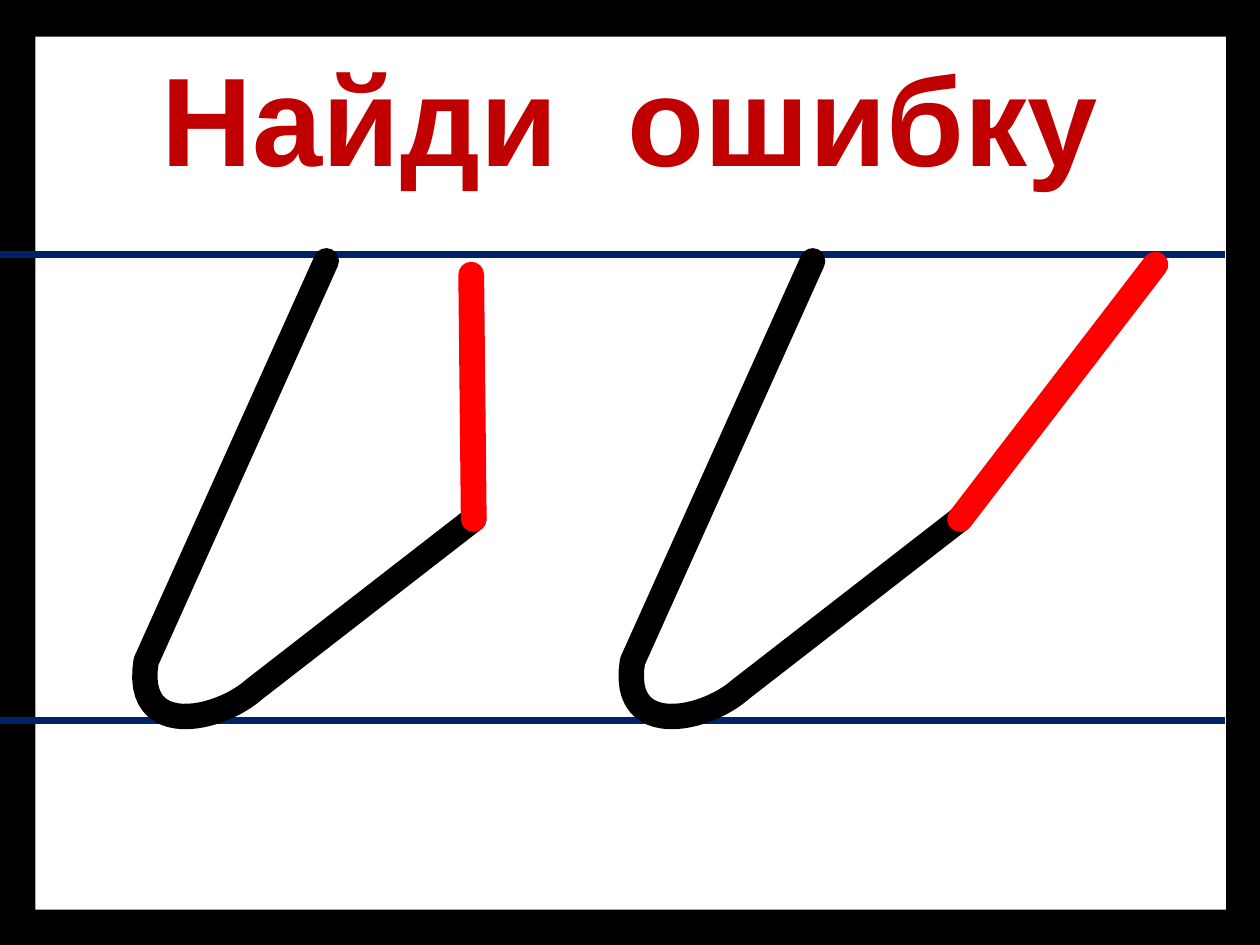
from lxml import etree
from pptx import Presentation
from pptx.dml.color import RGBColor
from pptx.enum.shapes import MSO_CONNECTOR, MSO_SHAPE
from pptx.enum.text import MSO_ANCHOR, PP_ALIGN
from pptx.oxml.ns import qn
from pptx.util import Inches, Pt

STRAIGHT = MSO_CONNECTOR.STRAIGHT
RECTANGLE = MSO_SHAPE.RECTANGLE

COLORS = {"frame": "000000", "paper": "FFFFFF", "ruling": "002368",
          "title": "C00000", "stroke": "000000", "mistake": "FF0000"}

# Content: lengths in inches
TITLE = "Найди  ошибку"
PAPER = (0.28, 0.29, 9.45, 6.93)
RULING_HEIGHTS = (2.02, 5.72)
RULING_END = 9.72
HOOK_TOP = (2.59, 2.07)
HOOK_BEND = ((1.16, 5.25), (1.06, 5.87), (1.74, 5.72), (2.02, 5.47))
HOOK_END = (3.76, 4.12)
LETTERS = [  # shift to the right, tip of the mistaken stroke
    (0, (3.74, 2.18)),
    (3.86, (9.17, 2.1)),
]
BEND_STEPS = 24


def color(name):
    return RGBColor.from_string(COLORS[name])


def style_line(shape, name, width, rounded=False):
    shape.line.color.rgb = color(name)
    shape.line.width = Pt(width)
    if rounded:
        outline = shape.line._get_or_add_ln()
        outline.set("cap", "rnd")
        etree.SubElement(outline, qn("a:round"))


def add_line(start, end, name, width, rounded=False):
    line = slide.shapes.add_connector(
        STRAIGHT, *(Inches(value) for value in (*start, *end)))
    style_line(line, name, width, rounded)
    etree.SubElement(line.element.spPr, qn("a:effectLst"))


def bend_point(t):
    weights = ((1 - t) ** 3, 3 * t * (1 - t) ** 2, 3 * t ** 2 * (1 - t), t ** 3)
    return tuple(sum(w * point[axis] for w, point in zip(weights, HOOK_BEND))
                 for axis in (0, 1))


def add_hook(shift):
    bend = [bend_point(step / BEND_STEPS) for step in range(BEND_STEPS + 1)]
    points = [(Inches(x + shift), Inches(y))
              for x, y in (HOOK_TOP, *bend, HOOK_END)]
    builder = slide.shapes.build_freeform(*points[0])
    builder.add_line_segments(points[1:], close=False)
    hook = builder.convert_to_shape()
    hook.shadow.inherit = False
    hook.fill.background()
    style_line(hook, "stroke", 14.5, rounded=True)


deck = Presentation()
deck.slide_width, deck.slide_height = Inches(10), Inches(7.5)
slide = deck.slides.add_slide(deck.slide_layouts[5])
slide.background.fill.solid()
slide.background.fill.fore_color.rgb = color("frame")

# Title
title = slide.shapes.title
title.left, title.top, title.width, title.height = (
    Inches(value) for value in (0.5, 0.3, 9, 1.25))
title.text_frame.text = TITLE
title.text_frame.vertical_anchor = MSO_ANCHOR.MIDDLE
paragraph = title.text_frame.paragraphs[0]
paragraph.alignment = PP_ALIGN.CENTER
paragraph.font.name = "Arial"
paragraph.font.size = Pt(72)
paragraph.font.bold = True
paragraph.font.color.rgb = color("title")

# White paper, placed behind the title
paper = slide.shapes.add_shape(RECTANGLE, *(Inches(value) for value in PAPER))
paper.shadow.inherit = False
paper.fill.solid()
paper.fill.fore_color.rgb = color("paper")
paper.line.fill.background()
title.element.addprevious(paper.element)

# Ruled lines
for height in RULING_HEIGHTS:
    add_line((0, height), (RULING_END, height), "ruling", 4.25)

# Letter strokes, each with its mistake in red
for shift, tip in LETTERS:
    add_hook(shift)
    add_line((HOOK_END[0] + shift, HOOK_END[1]), tip, "mistake", 14.75, rounded=True)

deck.save("out.pptx")
